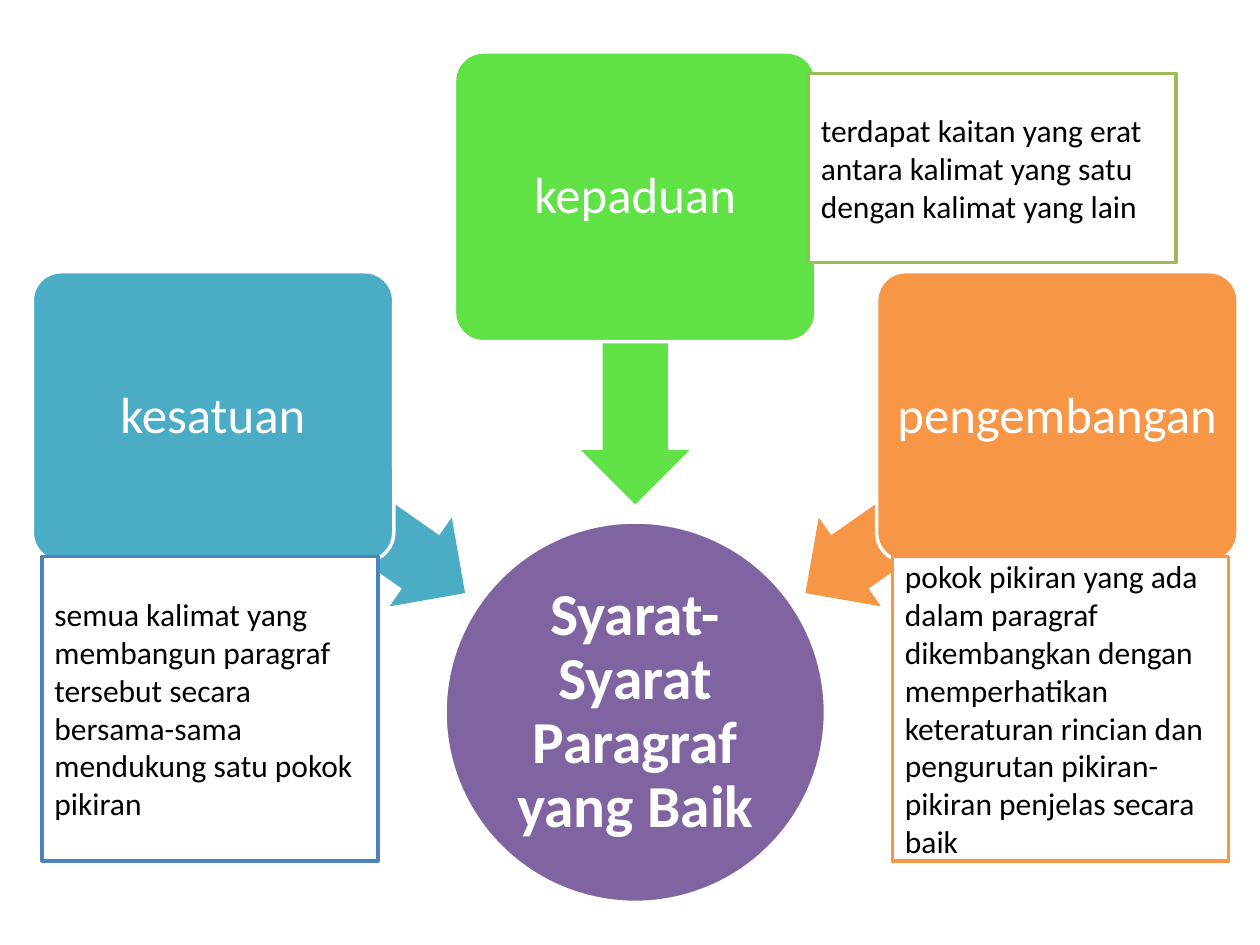
from math import cos, radians, sin

from pptx import Presentation
from pptx.dml.color import RGBColor
from pptx.enum.shapes import MSO_SHAPE as Shape
from pptx.enum.text import MSO_ANCHOR as Anchor, PP_ALIGN as Align
from pptx.util import Pt

WHITE = RGBColor(0xFF, 0xFF, 0xFF)
BLACK = RGBColor(0x00, 0x00, 0x00)
PURPLE = RGBColor(0x80, 0x64, 0xA2)
TEAL = RGBColor(0x4B, 0xAC, 0xC6)
GREEN = RGBColor(0x60, 0xE1, 0x46)
ORANGE = RGBColor(0xF7, 0x96, 0x46)
BLUE = RGBColor(0x4F, 0x81, 0xBD)
OLIVE = RGBColor(0x9B, 0xBB, 0x59)

HUB_CENTRE = (363, 407)
HUB_SIZE = (217.4, 217.4)
CARD_SIZE = (206.6, 165.6)
CARD_RADIUS = 294.5
ARROW_SIZE = (175.7, 62)
ARROW_RADIUS = 206.6

# Angle from the hub, label, colour
CONDITIONS = [
    (215, "kesatuan", TEAL),
    (270, "kepaduan", GREEN),
    (325, "pengembangan", ORANGE),
]

# Box (left, top, width, height), outline, text
NOTES = [
    ((24, 318, 192, 174), BLUE,
     "semua kalimat yang membangun paragraf tersebut secara bersama-sama "
     "mendukung satu pokok pikiran"),
    ((462, 42, 210, 108), OLIVE,
     "terdapat kaitan yang erat antara kalimat yang satu dengan kalimat yang lain"),
    ((510, 318, 192, 174), ORANGE,
     "pokok pikiran yang ada dalam paragraf dikembangkan dengan memperhatikan "
     "keteraturan rincian dan pengurutan pikiran-pikiran penjelas secara baik"),
]


def centred_box(centre, size):
    return (centre[0] - size[0] / 2, centre[1] - size[1] / 2, *size)


def around_hub(angle, radius):
    """Point at a clockwise angle and distance from the hub centre."""
    turn = radians(angle)
    return HUB_CENTRE[0] + radius * cos(turn), HUB_CENTRE[1] + radius * sin(turn)


def add_filled(page, kind, box, fill, line=None):
    shape = page.shapes.add_shape(kind, *(Pt(length) for length in box))
    shape.shadow.inherit = False
    shape.fill.solid()
    shape.fill.fore_color.rgb = fill
    if line is None:
        shape.line.fill.background()
    else:
        shape.line.color.rgb = line
        shape.line.width = Pt(2)
    return shape


def write(shape, text, size, color, align, bold=False, inset=None, spacing=None):
    frame = shape.text_frame
    frame.word_wrap = True
    frame.vertical_anchor = Anchor.MIDDLE
    if inset is not None:
        frame.margin_left = frame.margin_right = Pt(inset)
        frame.margin_top = frame.margin_bottom = Pt(inset)
    para = frame.paragraphs[0]
    para.text = text
    para.alignment = align
    if spacing is not None:
        para.line_spacing = spacing
    para.font.name = "Calibri"
    para.font.size = Pt(size)
    para.font.bold = bold
    para.font.color.rgb = color


def add_hub(page, box):
    hub = add_filled(page, Shape.OVAL, box, PURPLE, WHITE)
    write(hub, "Syarat-Syarat Paragraf yang Baik", 34, WHITE, Align.CENTER,
          bold=True, inset=1.5, spacing=0.9)


def add_arrow(page, box, angle, color):
    arrow = add_filled(page, Shape.LEFT_ARROW, box, color)
    arrow.adjustments[0] = 0.6
    arrow.adjustments[1] = 0.5
    arrow.rotation = angle


def add_card(page, box, label, color):
    card = add_filled(page, Shape.ROUNDED_RECTANGLE, box, color, WHITE)
    card.adjustments[0] = 0.1
    write(card, label, 29, WHITE, Align.CENTER, inset=4.3, spacing=0.9)


def add_note(page, box, outline, text):
    note = add_filled(page, Shape.RECTANGLE, box, WHITE, outline)
    write(note, text, 18, BLACK, Align.LEFT)


def main():
    deck = Presentation()
    deck.slide_width, deck.slide_height = Pt(720), Pt(540)
    page = deck.slides.add_slide(deck.slide_layouts[6])

    add_hub(page, centred_box(HUB_CENTRE, HUB_SIZE))
    for angle, label, color in CONDITIONS:
        arrow_centre = around_hub(angle, ARROW_RADIUS)
        add_arrow(page, centred_box(arrow_centre, ARROW_SIZE), angle, color)
        card_centre = around_hub(angle, CARD_RADIUS)
        add_card(page, centred_box(card_centre, CARD_SIZE), label, color)
    for box, outline, text in NOTES:
        add_note(page, box, outline, text)

    deck.save("out.pptx")


if __name__ == "__main__":
    main()
